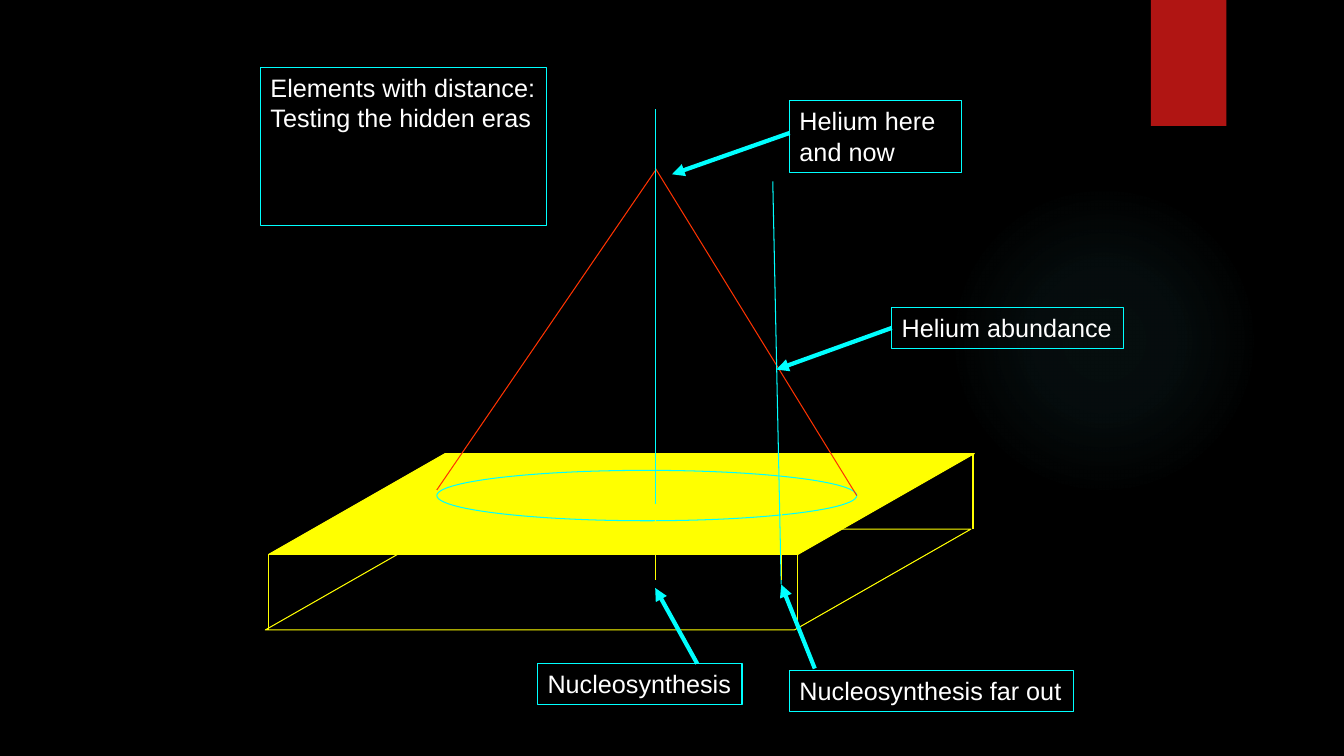
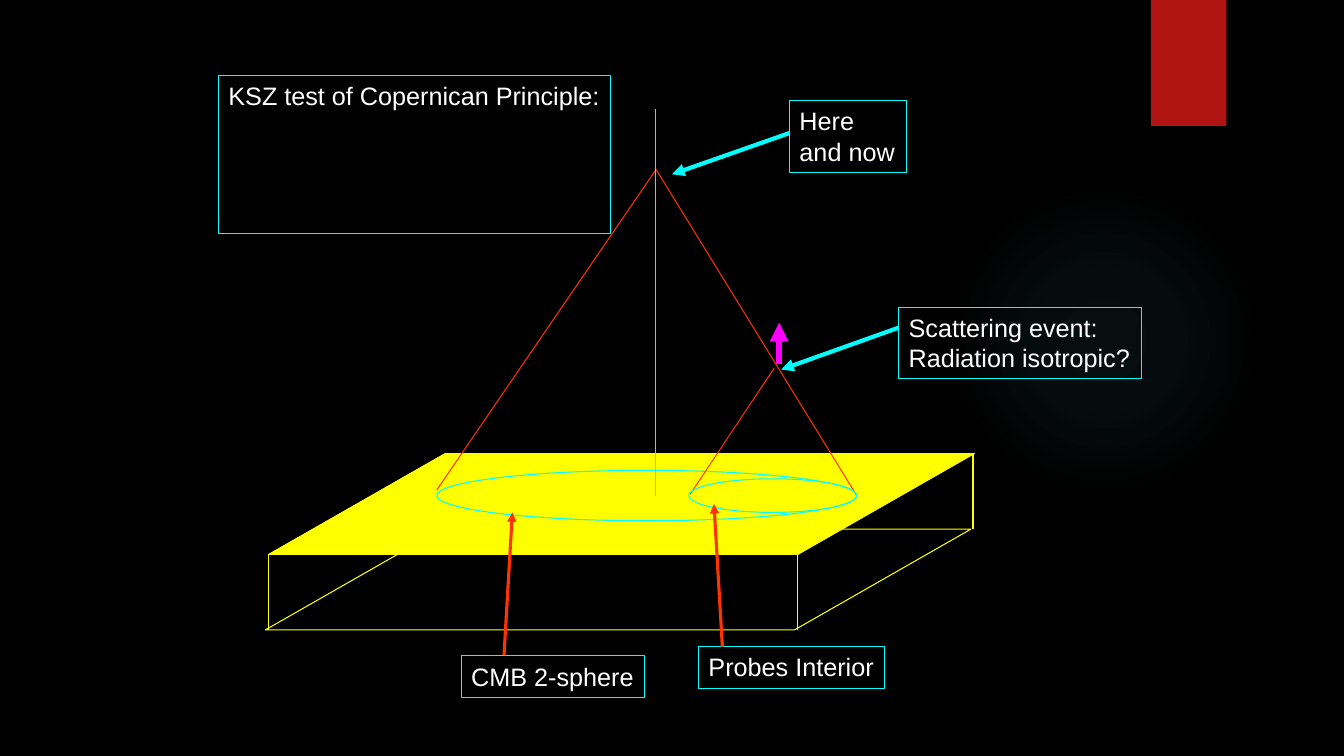
from lxml import etree
from pptx import Presentation
from pptx.dml.color import RGBColor
from pptx.enum import shapes, text
from pptx.oxml import ns, parse_xml
from pptx.util import Pt

BLACK, WHITE, RED = "000000", "FFFFFF", "B01513"
YELLOW, CYAN, ORANGE, MAGENTA = "FFFF00", "00FFFF", "FF3300", "FF00FF"
GLOW = "50B9C1"
GLOW_STOPS = [(0, 7), (36, 6), (69, 0)]
FONT, TEXT_SIZE = "Arial", 18
THIN, MEDIUM, THICK, HEAVY = 0.75, 2.25, 3, 4.5

APEX = (468, 120)
HORIZON = (312, 336, 300, 36)
SLAB = (192, 324, 504, 72)


def color(hex_string):
    """Turn a hex string into a colour."""
    return RGBColor.from_string(hex_string)


def points(values):
    """Turn plain numbers into lengths."""
    return [Pt(value) for value in values]


def outline(part, hex_string, width=THIN):
    """Give a shape or connector a solid line."""
    part.line.color.rgb = color(hex_string)
    part.line.width = Pt(width)


def add_figure(slide, kind, box, fill=None, line=None):
    """Add a preset shape with an optional fill and line."""
    figure = slide.shapes.add_shape(kind, *points(box))
    figure.shadow.inherit = False
    if fill:
        figure.fill.solid()
        figure.fill.fore_color.rgb = color(fill)
    else:
        figure.fill.background()
    if line:
        outline(figure, line)
    else:
        figure.line.fill.background()
    return figure


def add_line(slide, start, end, hex_string, width=THIN, arrow=False):
    """Add a straight line, with an arrowhead at its end if wanted."""
    line = slide.shapes.add_connector(
        shapes.MSO_CONNECTOR.STRAIGHT, *points(start + end))
    outline(line, hex_string, width)
    properties = line.element.spPr
    if arrow:
        stroke = properties.find(ns.qn("a:ln"))
        etree.SubElement(stroke, ns.qn("a:tailEnd")).set("type", "triangle")
    etree.SubElement(properties, ns.qn("a:effectLst"))
    return line


def format_label(label, words):
    """Fill a framed label with left-aligned white text."""
    outline(label, CYAN)
    frame = label.text_frame
    frame.text = words
    frame.word_wrap = False
    frame.auto_size = text.MSO_AUTO_SIZE.SHAPE_TO_FIT_TEXT
    frame.vertical_anchor = text.MSO_ANCHOR.TOP
    for paragraph in frame.paragraphs:
        paragraph.alignment = text.PP_ALIGN.LEFT
        for run in paragraph.runs:
            run.font.name = FONT
            run.font.size = Pt(TEXT_SIZE)
            run.font.color.rgb = color(WHITE)


def add_label(slide, box, words):
    """Add a framed label."""
    label = slide.shapes.add_textbox(*points(box))
    format_label(label, words)
    return label


def place_title(slide, box, words):
    """Move the title placeholder and format it as a label."""
    title = slide.shapes.title
    title.left, title.top, title.width, title.height = points(box)
    format_label(title, words)


def decorate_layout(layout, slide):
    """Draw the glow and the red band and move them to the layout."""
    glow = add_figure(slide, shapes.MSO_SHAPE.OVAL, (677.5, 132, 222, 222))
    stops = "".join(
        f'<a:gs pos="{pos * 1000}"><a:srgbClr val="{GLOW}">'
        f'<a:alpha val="{alpha * 1000}"/></a:srgbClr></a:gs>'
        for pos, alpha in GLOW_STOPS)
    gradient = parse_xml(
        f'<a:gradFill {ns.nsdecls("a")}><a:gsLst>{stops}</a:gsLst>'
        '<a:path path="circle"><a:fillToRect l="50000" t="50000" '
        'r="50000" b="50000"/></a:path></a:gradFill>')
    properties = glow.element.spPr
    properties.replace(properties.find(ns.qn("a:noFill")), gradient)
    band = add_figure(slide, shapes.MSO_SHAPE.RECTANGLE, (822, 0, 54, 90), RED)
    for index, part in enumerate((glow, band)):
        part.element.xpath("./p:nvSpPr/p:cNvPr")[0].set("id", str(101 + index))
        layout.shapes.element.insert(2 + index, part.element)


def draw_slab(slide, box):
    """Draw the filled plane with the open box below it."""
    left, top, width, height = box
    skew, depth = 126, 54
    for dx, dy, fill in ((0, 0, YELLOW), (-2.5, depth, None)):
        plane = add_figure(slide, shapes.MSO_SHAPE.PARALLELOGRAM,
                           (left + dx, top + dy, width, height), fill, YELLOW)
        plane.adjustments[0] = skew / height
    for dx, dy in ((0, height), (width - skew, height), (width - 1, 0)):
        add_line(slide, (left + dx, top + dy),
                 (left + dx, top + dy + depth), YELLOW)


def draw_light_cone(slide, apex, box):
    """Draw the horizon ellipse and the cone edges from the apex."""
    left, top, width, height = box
    x, y = apex
    middle = top + height / 2
    add_figure(slide, shapes.MSO_SHAPE.OVAL, box, line=CYAN)
    add_line(slide, (x, y + 2), (left, middle - 4), ORANGE)
    add_line(slide, apex, (left + width, middle), ORANGE)


def draw_spacetime(slide, worldline_end, here_width, here_words):
    """Draw the slab, cone, worldline and observer that the slides share."""
    x, y = APEX
    draw_slab(slide, SLAB)
    draw_light_cone(slide, APEX, HORIZON)
    add_line(slide, (x, y - 42), (x, worldline_end), CYAN)
    add_line(slide, (x + 96, y - 25), (x + 12, y + 4.5), CYAN, THICK, True)
    add_label(slide, (x + 96, y - 48, here_width, 51), here_words)


def build_elements(slide):
    """Build the slide on elements with distance."""
    place_title(slide, (186, 48, 204.5, 51),
                "Elements with distance:\nTesting the hidden eras")
    draw_spacetime(slide, 414, 122.5, "Helium here\nand now")
    abundance = add_label(slide, (637, 219.5, 165.5, 29.5), "Helium abundance")
    pointer = add_line(slide, (637, 234), (554.5, 264), CYAN, THICK, True)
    pointer.begin_connect(abundance, 1)
    add_line(slide, (552, 129.5), (558, 417.5), CYAN)
    for x in (468, 558):
        add_line(slide, (x, 360), (x, 414), YELLOW)
    add_label(slide, (384, 474, 146, 29.5), "Nucleosynthesis")
    add_line(slide, (498, 474), (468, 420), CYAN, THICK, True)
    add_line(slide, (582, 477.5), (558, 417.5), CYAN, THICK, True)
    add_label(slide, (564, 479, 202.5, 29.5), "Nucleosynthesis far out")


def build_copernican(slide):
    """Build the slide on the test of the Copernican Principle."""
    place_title(slide, (156, 54, 280, 29.5), "KSZ test of Copernican Principle:")
    draw_spacetime(slide, 354, 83.5, "Here\nand now")
    add_line(slide, (553, 263), (493, 353), ORANGE)
    add_figure(slide, shapes.MSO_SHAPE.OVAL, (492, 342, 120, 24), line=CYAN)
    add_label(slide, (642, 219.5, 173.5, 51),
              "Scattering event:\nRadiation isotropic?")
    add_line(slide, (642, 234), (558, 264), CYAN, THICK, True)
    add_line(slide, (556.5, 260), (556.5, 230.5), MAGENTA, HEAVY, True)
    add_label(slide, (329.5, 468.5, 131, 29.5), "CMB 2-sphere")
    add_line(slide, (360, 468), (366, 366), ORANGE, MEDIUM, True)
    add_label(slide, (499, 462, 133, 29.5), "Probes Interior")
    add_line(slide, (516, 462), (510, 360), ORANGE, MEDIUM, True)


def main():
    """Build and save the presentation."""
    deck = Presentation()
    deck.slide_width, deck.slide_height = points((960, 540))
    background = deck.slide_master.background.fill
    background.solid()
    background.fore_color.rgb = color(BLACK)
    layout = deck.slide_layouts.get_by_name("Title Only")
    elements, copernican = [deck.slides.add_slide(layout) for _ in range(2)]
    decorate_layout(layout, elements)
    build_elements(elements)
    build_copernican(copernican)
    deck.save("out.pptx")


if __name__ == "__main__":
    main()
